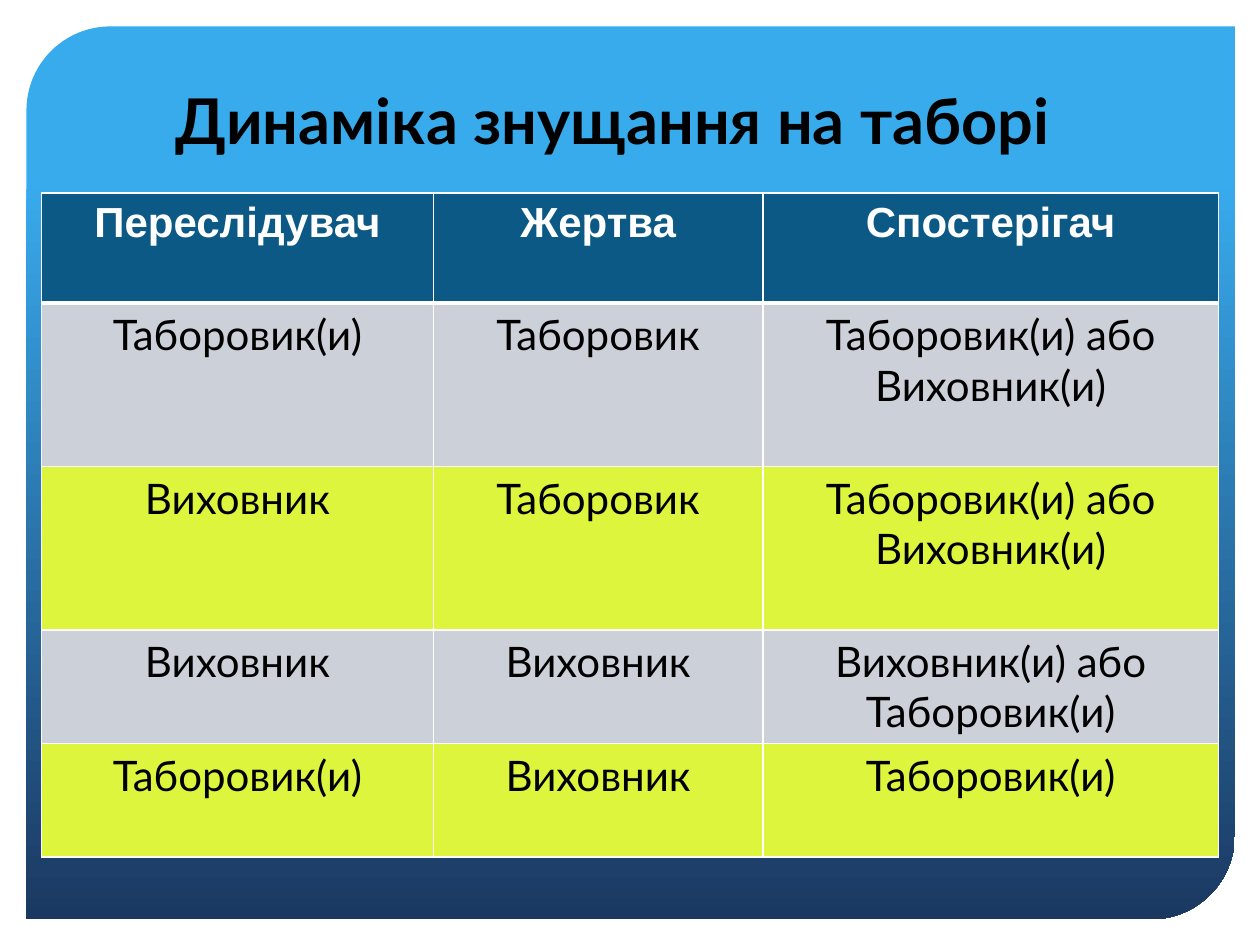
from lxml.etree import SubElement
from pptx import Presentation
from pptx.dml.color import RGBColor
from pptx.enum.shapes import MSO_SHAPE
from pptx.enum.text import MSO_ANCHOR, PP_ALIGN
from pptx.oxml.ns import qn
from pptx.util import Inches, Pt

WHITE = RGBColor(0xFF, 0xFF, 0xFF)
BLACK = RGBColor(0x00, 0x00, 0x00)
SKY = RGBColor(0x38, 0xAB, 0xED)
NAVY = RGBColor(0x1B, 0x38, 0x61)
HEADER_BLUE = RGBColor(0x0C, 0x59, 0x86)
GREY = RGBColor(0xCC, 0xD1, 0xD9)
LIME = RGBColor(0xDD, 0xF5, 0x3D)

ROLES = [
    ("Переслідувач", "Жертва", "Спостерігач"),
    ("Таборовик(и)", "Таборовик", "Таборовик(и) або Виховник(и)"),
    ("Виховник", "Таборовик", "Таборовик(и) або Виховник(и)"),
    ("Виховник", "Виховник", "Виховник(и) або Таборовик(и)"),
    ("Таборовик(и)", "Виховник", "Таборовик(и)"),
]
COLUMN_SHARES = [0.333, 0.28, 0.387]
ROW_SHARES = [0.166, 0.246, 0.246, 0.171, 0.171]


def format_text(frame, font_name, size, color, bold):
    para = frame.paragraphs[0]
    para.alignment = PP_ALIGN.CENTER
    para.font.name = font_name
    para.font.size = Pt(size)
    para.font.color.rgb = color
    para.font.bold = bold


def add_backdrop(page, box):
    panel = page.shapes.add_shape(MSO_SHAPE.ROUND_2_DIAG_RECTANGLE, *box)
    panel.adjustments[0], panel.adjustments[1] = 0.094, 0
    panel.shadow.inherit = False
    panel.line.fill.background()
    panel.fill.gradient()
    panel.fill.gradient_angle = 270
    for stop, position, color in zip(panel.fill.gradient_stops, (0.17, 1), (SKY, NAVY)):
        stop.position = position
        stop.color.rgb = color


def place_title(page, box):
    title = page.shapes.title
    title.left, title.top, title.width, title.height = box
    title.text_frame.text = "Динаміка знущання на таборі"
    title.text_frame.vertical_anchor = MSO_ANCHOR.BOTTOM
    format_text(title.text_frame, "Lato", 36, BLACK, True)
    # Bring the title in front of the backdrop
    title.element.getparent().append(title.element)


def set_borders(cell, bottom_width):
    properties = cell._tc.get_or_add_tcPr()
    for position, side in enumerate(("lnL", "lnR", "lnT", "lnB")):
        width = bottom_width if side == "lnB" else 1
        line = SubElement(properties, qn(f"a:{side}"), w=str(Pt(width)))
        fill = SubElement(line, qn("a:solidFill"))
        SubElement(fill, qn("a:srgbClr"), val=str(WHITE))
        properties.insert(position, line)


def add_roles_table(page, box):
    table = page.shapes.add_table(len(ROLES), len(COLUMN_SHARES), *box).table
    for column, share in zip(table.columns, COLUMN_SHARES):
        column.width = int(box[2] * share)
    for index, (row, share) in enumerate(zip(table.rows, ROW_SHARES)):
        row.height = int(box[3] * share)
        is_header = index == 0
        for cell, words in zip(row.cells, ROLES[index]):
            cell.text = words
            cell.fill.solid()
            if is_header:
                cell.fill.fore_color.rgb = HEADER_BLUE
                format_text(cell.text_frame, "Arial", 24, WHITE, True)
            else:
                cell.fill.fore_color.rgb = GREY if index % 2 else LIME
                format_text(cell.text_frame, "Lato", 24, BLACK, False)
            set_borders(cell, 3 if is_header else 1)


def main():
    deck = Presentation()
    deck.slide_width, deck.slide_height = Inches(10), Inches(7.5)
    page = deck.slides.add_slide(deck.slide_layouts[5])

    def area(left, top, width, height):
        """Turn shares of the slide's size into a box."""
        return (int(deck.slide_width * left), int(deck.slide_height * top),
                int(deck.slide_width * width), int(deck.slide_height * height))

    add_backdrop(page, area(0.021, 0.028, 0.959, 0.945))
    place_title(page, area(0.072, 0.02, 0.829, 0.153))
    add_roles_table(page, area(0.033, 0.204, 0.934, 0.703))
    deck.save("out.pptx")


if __name__ == "__main__":
    main()
